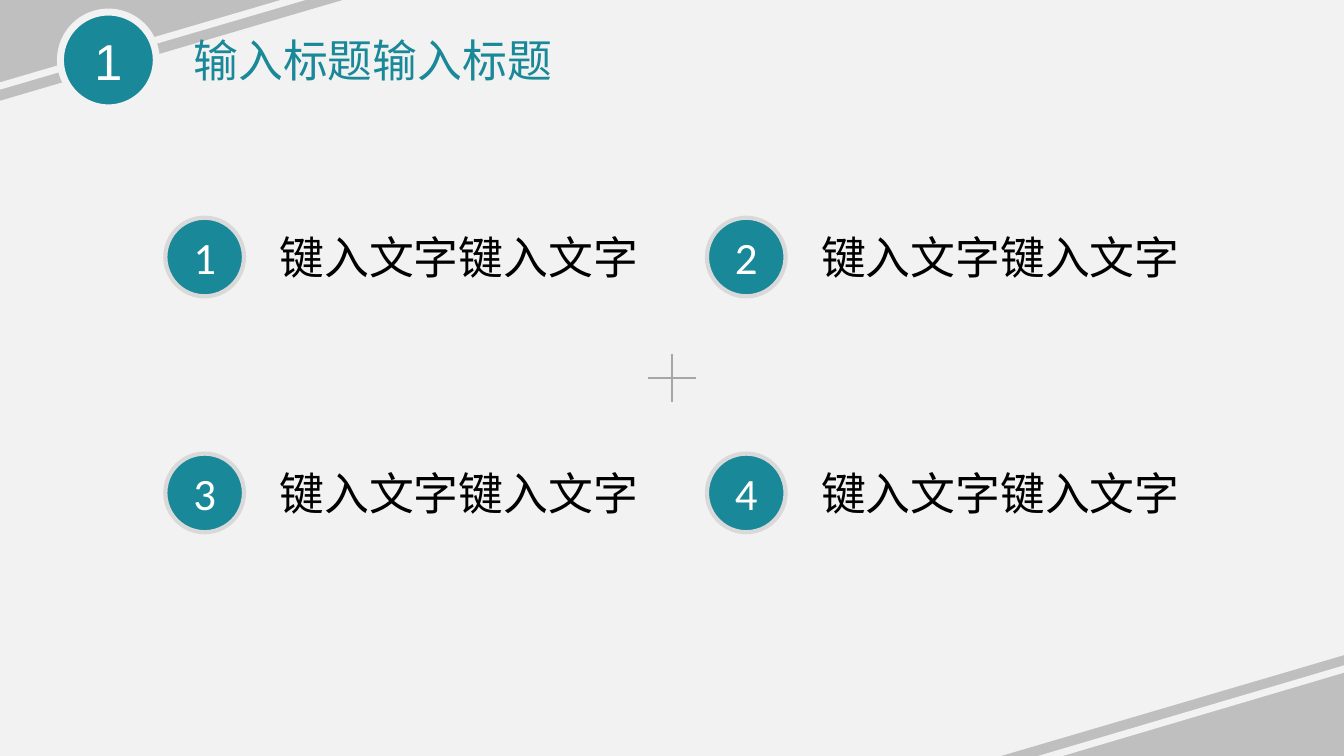
from typing import NamedTuple

from lxml.etree import SubElement
from pptx import Presentation
from pptx.dml.color import RGBColor
from pptx.enum.shapes import MSO_CONNECTOR, MSO_SHAPE
from pptx.enum.text import MSO_ANCHOR, MSO_AUTO_SIZE, PP_ALIGN
from pptx.oxml.ns import qn
from pptx.util import Inches, Length, Pt

COLORS = {
    "page": "F2F2F2",
    "corner": "BFBFBF",
    "teal": "198898",
    "ring": "D9D9D9",
    "cross": "A6A6A6",
    "text": "000000",
    "digit": "FFFFFF",
}
WIDTH, HEIGHT = Inches(13.33), Inches(7.5)


# Positions are percentages of the slide's width and height
class Corner(NamedTuple):
    left: float
    top: float
    flip: str


class Stroke(NamedTuple):
    start: tuple[float, float]
    end: tuple[float, float]
    color: str
    weight: float


class Badge(NamedTuple):
    digit: str
    left: float
    top: float
    diameter: float  # share of the height
    ring: str
    weight: float
    font: str
    size: int


class Label(NamedTuple):
    words: str
    left: float
    top: float
    width: float
    color: str
    wrap: bool


CORNER_WIDTH, CORNER_HEIGHT = 25.5, 13.33
LABEL_HEIGHT = 8.53
CORNERS = [
    (Corner(0, 0, "flipV"), Stroke((33.83, -6.27), (-1.2, 12), "page", 5)),
    (Corner(100 - CORNER_WIDTH, 100 - CORNER_HEIGHT, "flipH"),
     Stroke((73.35, 102.53), (108.3, 84.13), "page", 5)),
]
TITLE_BADGE = Badge("1", 4.5, 1.6, 12.67, "page", 5, "Arial", 36)
TITLE = Label("输入标题输入标题", 13.65, 3.73, 42.68, "teal", True)

# Grid of four numbered items
ITEMS = ["键入文字键入文字"] * 4
GRID_COLUMNS = 2
GRID_LEFT, GRID_TOP = 12.3, 28.8
COLUMN_STEP, ROW_STEP = 40.3, 31.2
LABEL_SHIFT, LABEL_DROP, LABEL_WIDTH = 7.75, 0.93, 28.42

CROSS = [
    Stroke((50, 46.8), (50, 53.2), "cross", 1.5),
    Stroke((51.8, 50), (48.2, 50), "cross", 1.5),
]


def across(percent: float) -> Length:
    return Length(round(WIDTH * percent / 100))


def down(percent: float) -> Length:
    return Length(round(HEIGHT * percent / 100))


def rgb(name: str) -> RGBColor:
    return RGBColor.from_string(COLORS[name])


def style_text(para, font: str, size: int, color: str) -> None:
    for span in para.runs:
        span.font.name = font
        span.font.size = Pt(size)
        span.font.color.rgb = rgb(color)


def draw_corner(page, corner: Corner) -> None:
    triangle = page.shapes.add_shape(
        MSO_SHAPE.RIGHT_TRIANGLE, across(corner.left), down(corner.top),
        across(CORNER_WIDTH), down(CORNER_HEIGHT))
    triangle.shadow.inherit = False
    triangle.fill.solid()
    triangle.fill.fore_color.rgb = rgb("corner")
    triangle.line.fill.background()
    triangle.element.spPr.find(qn("a:xfrm")).set(corner.flip, "1")


def draw_stroke(page, stroke: Stroke) -> None:
    line = page.shapes.add_connector(
        MSO_CONNECTOR.STRAIGHT, across(stroke.start[0]), down(stroke.start[1]),
        across(stroke.end[0]), down(stroke.end[1]))
    line.line.color.rgb = rgb(stroke.color)
    line.line.width = Pt(stroke.weight)
    SubElement(line.element.spPr, qn("a:effectLst"))


def draw_badge(page, badge: Badge) -> None:
    diameter = down(badge.diameter)
    circle = page.shapes.add_shape(
        MSO_SHAPE.OVAL, across(badge.left), down(badge.top), diameter, diameter)
    circle.shadow.inherit = False
    circle.fill.solid()
    circle.fill.fore_color.rgb = rgb("teal")
    circle.line.color.rgb = rgb(badge.ring)
    circle.line.width = Pt(badge.weight)
    frame = circle.text_frame
    frame.text = badge.digit
    frame.vertical_anchor = MSO_ANCHOR.MIDDLE
    para = frame.paragraphs[0]
    para.alignment = PP_ALIGN.CENTER
    style_text(para, badge.font, badge.size, "digit")


def draw_label(page, label: Label) -> None:
    box = page.shapes.add_textbox(
        across(label.left), down(label.top), across(label.width), down(LABEL_HEIGHT))
    frame = box.text_frame
    frame.text = label.words
    frame.word_wrap = label.wrap
    frame.auto_size = MSO_AUTO_SIZE.SHAPE_TO_FIT_TEXT
    style_text(frame.paragraphs[0], "Calibri", 32, label.color)


def main() -> None:
    deck = Presentation()
    deck.slide_width, deck.slide_height = WIDTH, HEIGHT
    page = deck.slides.add_slide(deck.slide_layouts[6])
    page.background.fill.solid()
    page.background.fill.fore_color.rgb = rgb("page")

    # Corner decoration and header
    for corner, stripe in CORNERS:
        draw_corner(page, corner)
        draw_stroke(page, stripe)
    draw_badge(page, TITLE_BADGE)
    draw_label(page, TITLE)

    # Numbered items
    for index, words in enumerate(ITEMS):
        row, column = divmod(index, GRID_COLUMNS)
        left = GRID_LEFT + column * COLUMN_STEP
        top = GRID_TOP + row * ROW_STEP
        draw_label(page, Label(words, left + LABEL_SHIFT, top + LABEL_DROP,
                               LABEL_WIDTH, "text", False))
        draw_badge(page, Badge(str(index + 1), left, top, 10.4,
                               "ring", 3, "Calibri", 32))

    # Cross in the middle
    for stroke in CROSS:
        draw_stroke(page, stroke)

    deck.save("out.pptx")


if __name__ == "__main__":
    main()
